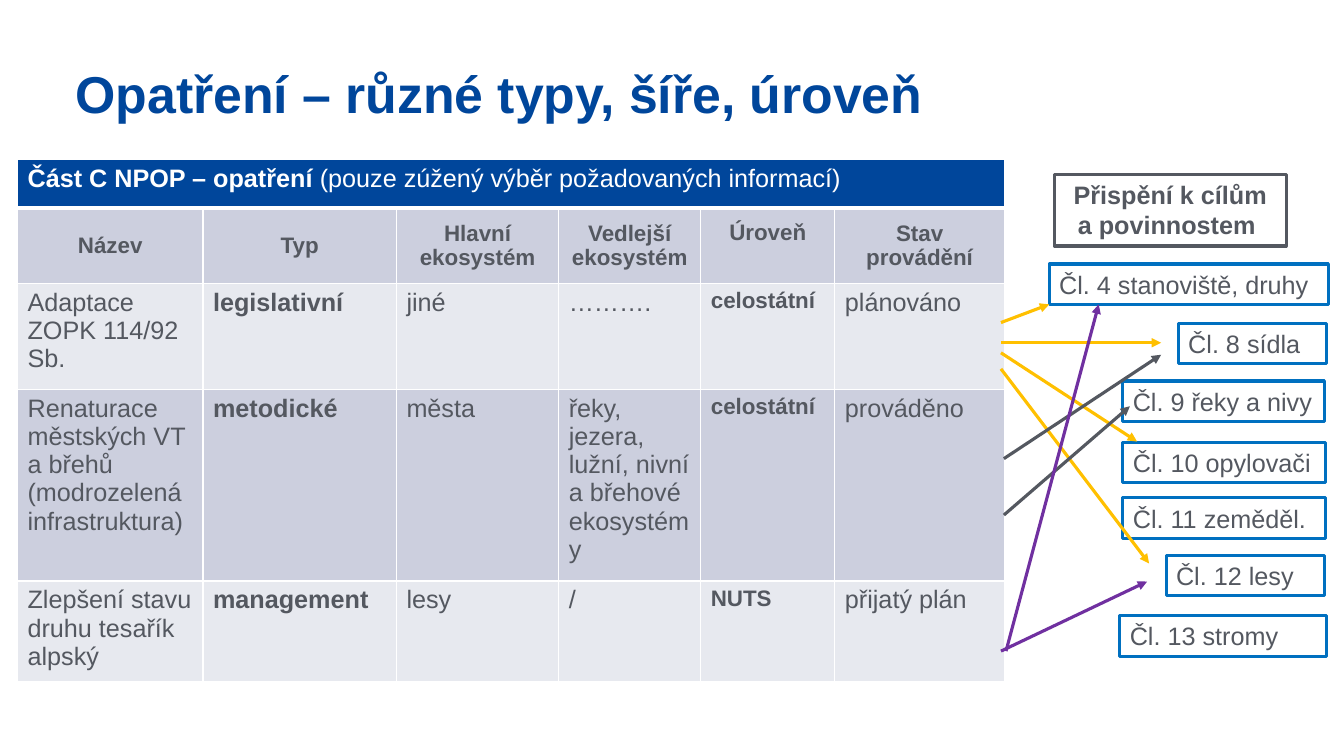
from pptx import Presentation
from pptx.dml.color import RGBColor
from pptx.enum.shapes import MSO_CONNECTOR
from pptx.enum.text import MSO_ANCHOR, MSO_AUTO_SIZE, PP_ALIGN
from pptx.oxml import parse_xml
from pptx.oxml.ns import nsdecls
from pptx.util import Pt

BLUE, GREY, WHITE = "00469B", "545860", "FFFFFF"
EDGE, GOLD, PLUM = "0070C0", "FFC000", "7030A0"
DARK, PALE = "CCCFDE", "E7E9EF"

COLS = [132.5, 138.2, 115.9, 101.5, 95.8, 121.1]
ROWS = [34.5, 54, 75.6, 136.8, 72]
LEAD = ["Část C NPOP – opatření ", "(pouze zúžený výběr požadovaných informací)"]
HEADS = ["Název", "Typ", "Hlavní ekosystém", "Vedlejší ekosystém", "Úroveň", "Stav provádění"]
BODY = [
    ["Adaptace ZOPK 114/92 Sb.", "legislativní", "jiné", "……….", "celostátní", "plánováno"],
    ["Renaturace městských VT a břehů (modrozelená infrastruktura)", "metodické", "města",
     "řeky, jezera, lužní, nivní a břehové ekosystémy", "celostátní", "prováděno"],
    ["Zlepšení stavu druhu tesařík alpský", "management", "lesy", "/", "NUTS", "přijatý plán"],
]
GOALS = [
    ("Čl. 4 stanoviště, druhy", 0, 64, 199.4),
    ("Čl. 8 sídla", 92.2, 106.5, 105.8),
    ("Čl. 9 řeky a nivy", 52.6, 147.6, 144),
    ("Čl. 10 opylovači", 52.6, 191.5, 144.7),
    ("Čl. 11 zeměděl.", 52.6, 231.1, 144.7),
    ("Čl. 12 lesy", 83.5, 272.1, 113),
    ("Čl. 13 stromy", 50.4, 315.3, 147.6),
]
LINKS = [
    (GOLD, 0, 13, 34.5, 0),
    (GOLD, 0, 27.4, 114.4, 27.4),
    (GOLD, 0, 34.6, 97.2, 98),
    (GOLD, 0, 46.1, 105.8, 185.1),
    (GREY, 2.1, 110.2, 114.4, 36),
    (GREY, 2.1, 150.5, 92.1, 72.8),
    (PLUM, 3.6, 247.7, 69.8, 0),
    (PLUM, 0, 247.7, 104.4, 198),
]


def color(code):
    """Turn a hex string into a colour."""
    return RGBColor.from_string(code)


def style(run, size, code, bold=False):
    """Set the font of a run."""
    font = run.font
    font.name, font.size, font.bold = "Arial", Pt(size), bold
    font.color.rgb = color(code)


def border(cell, base=1):
    """Draw white borders round a cell, with the given width at its base."""
    props = cell._tc.get_or_add_tcPr()
    for spot, side in enumerate("LRTB"):
        width = Pt(base if side == "B" else 1)
        props.insert(spot, parse_xml(
            f'<a:ln{side} {nsdecls("a")} w="{width}"><a:solidFill>'
            f'<a:srgbClr val="{WHITE}"/></a:solidFill></a:ln{side}>'))


def fill(cell, text, back, size, code=GREY, bold=False):
    """Write one table cell and paint it."""
    cell.text_frame.text = text
    style(cell.text_frame.paragraphs[0].runs[0], size, code, bold)
    cell.fill.solid()
    cell.fill.fore_color.rgb = color(back)


def title(slide, x, y, w, h):
    """Place the slide title."""
    frame = slide.shapes.add_textbox(Pt(x), Pt(y), Pt(w), Pt(h)).text_frame
    frame.word_wrap = True
    frame.margin_left = frame.margin_right = frame.margin_top = frame.margin_bottom = 0
    frame.text = "Opatření – různé typy, šíře, úroveň"
    para = frame.paragraphs[0]
    para.line_spacing = 0.9
    style(para.runs[0], 37, BLUE, True)


def grid(slide, x, y, w, h):
    """Place the table of measures."""
    table = slide.shapes.add_table(len(ROWS), len(COLS), Pt(x), Pt(y), Pt(w), Pt(h)).table
    for col, size in zip(table.columns, COLS):
        col.width = Pt(size * w / sum(COLS))
    for row, size in zip(table.rows, ROWS):
        row.height = Pt(size * h / sum(ROWS))

    top = table.cell(0, 0)
    top.merge(table.cell(0, len(COLS) - 1))
    fill(top, LEAD[0], BLUE, 18, WHITE, True)
    rest = top.text_frame.paragraphs[0].add_run()
    rest.text = LEAD[1]
    style(rest, 18, WHITE)

    for c, text in enumerate(HEADS):
        cell = table.cell(1, c)
        fill(cell, text, DARK, 16, bold=True)
        cell.vertical_anchor = MSO_ANCHOR.MIDDLE
        cell.text_frame.paragraphs[0].alignment = PP_ALIGN.CENTER
    table.cell(1, HEADS.index("Úroveň")).margin_bottom = Pt(22)

    for r, line in enumerate(BODY, 2):
        for c, text in enumerate(line):
            fill(table.cell(r, c), text, DARK if r % 2 else PALE,
                 16 if c == 4 else 18, bold=c in (1, 4))
    for r in range(len(ROWS)):
        for c in range(len(COLS)):
            border(table.cell(r, c), 1 if r else 3)


def label(slide, text, x, y, w, h, edge, bold=False):
    """Place one outlined label."""
    box = slide.shapes.add_textbox(Pt(x), Pt(y), Pt(w), Pt(h))
    box.line.color.rgb = color(edge)
    box.line.width = Pt(2.25)
    frame = box.text_frame
    frame.word_wrap = True
    frame.auto_size = MSO_AUTO_SIZE.SHAPE_TO_FIT_TEXT
    frame.text = text
    style(frame.paragraphs[0].runs[0], 18, GREY, bold)
    return frame


def goals(slide, x, y):
    """Place the heading and the labels of the goals."""
    head = label(slide, "Přispění k cílům a povinnostem ", x + 3.6, y, 165.6, 51.1, GREY, True)
    head.paragraphs[0].alignment = PP_ALIGN.CENTER
    for text, dx, dy, w in GOALS:
        label(slide, text, x + dx, y + dy, w, 28.8, EDGE)


def links(slide, x, y):
    """Draw the arrows from the measures to the goals."""
    for code, ax, ay, bx, by in LINKS:
        link = slide.shapes.add_connector(
            MSO_CONNECTOR.STRAIGHT, Pt(x + ax), Pt(y + ay), Pt(x + bx), Pt(y + by))
        link.line.color.rgb = color(code)
        link.line.width = Pt(2.25)
        link.line._get_or_add_ln().append(
            parse_xml(f'<a:tailEnd {nsdecls("a")} type="triangle"/>'))
        link._element.spPr.append(parse_xml(f'<a:effectLst {nsdecls("a")}/>'))


def main():
    """Build and save the slide."""
    deck = Presentation()
    deck.slide_width, deck.slide_height = Pt(960), Pt(540)
    slide = deck.slides.add_slide(deck.slide_layouts[6])
    goals(slide, 749.5, 124.6)
    grid(slide, 12.5, 114, 705, 373)
    links(slide, 715, 217.4)
    title(slide, 54, 49, 780, 47)
    deck.save("out.pptx")


if __name__ == "__main__":
    main()
